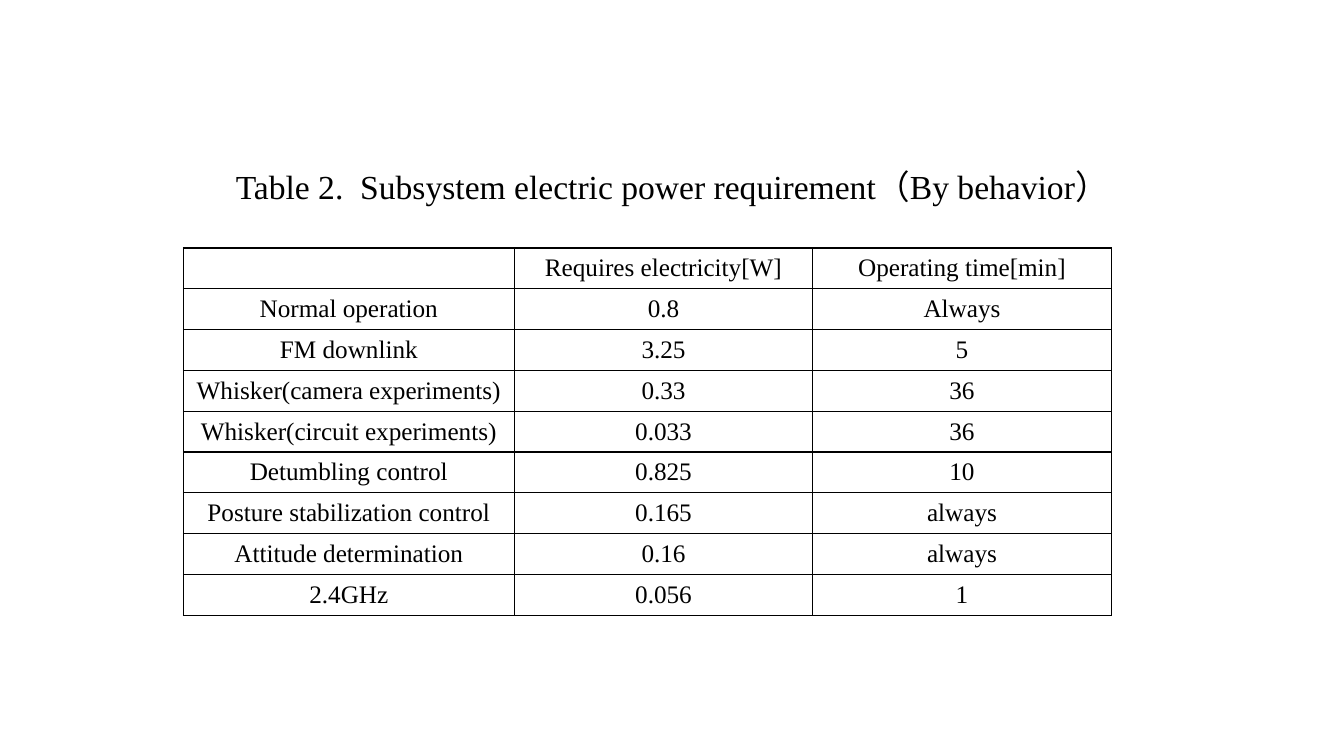
from typing import NamedTuple

import pptx
import pptx.dml.color
import pptx.enum.text
import pptx.oxml
import pptx.oxml.ns
import pptx.util

Pt = pptx.util.Pt
FONT = "Times New Roman"
BLACK, WHITE = "000000", "FFFFFF"
COL_WIDTHS = (236.4, 213.2, 213.2)
ROW_HEIGHT = 29.16


class PowerRow(NamedTuple):
    behavior: str
    watts: str
    minutes: str


POWER_ROWS = [
    PowerRow("", "Requires electricity[W]", "Operating time[min]"),
    PowerRow("Normal operation", "0.8", "Always"),
    PowerRow("FM downlink", "3.25", "5"),
    PowerRow("Whisker(camera experiments)", "0.33", "36"),
    PowerRow("Whisker(circuit experiments)", "0.033", "36"),
    PowerRow("Detumbling control", "0.825", "10"),
    PowerRow("Posture stabilization control", "0.165", "always"),
    PowerRow("Attitude determination", "0.16", "always"),
    PowerRow("2.4GHz", "0.056", "1"),
]


def rgb(color: str) -> pptx.dml.color.RGBColor:
    return pptx.dml.color.RGBColor.from_string(color)


def write_centred(tf, text: str, size: float) -> None:
    tf.text = text
    p = tf.paragraphs[0]
    p.alignment = pptx.enum.text.PP_ALIGN.CENTER
    for r in p.runs:
        r.font.name = FONT
        r.font.size = Pt(size)
        r.font.color.rgb = rgb(BLACK)


def add_borders(cell, color: str, width: float) -> None:
    """Line all four sides; borders must precede the fill in tcPr."""
    tc_pr = cell._tc.get_or_add_tcPr()
    for i, side in enumerate(("lnL", "lnR", "lnT", "lnB")):
        tc_pr.insert(i, pptx.oxml.parse_xml(
            f'<a:{side} {pptx.oxml.ns.nsdecls("a")} w="{Pt(width)}">'
            f'<a:solidFill><a:srgbClr val="{color}"/></a:solidFill></a:{side}>'))


def add_caption(slide) -> None:
    tf = slide.shapes.add_textbox(Pt(109.4), Pt(115.2), Pt(741.6), Pt(36)).text_frame
    tf.word_wrap = True
    write_centred(tf, "Table 2.  Subsystem electric power requirement（By behavior）", 24)


def add_power_table(slide) -> None:
    table = slide.shapes.add_table(
        len(POWER_ROWS), len(COL_WIDTHS), Pt(131), Pt(177.1),
        Pt(sum(COL_WIDTHS)), Pt(ROW_HEIGHT * len(POWER_ROWS))).table
    table.first_row = table.horz_banding = False
    for column, width in zip(table.columns, COL_WIDTHS):
        column.width = Pt(width)
    for row, values in zip(table.rows, POWER_ROWS):
        row.height = Pt(ROW_HEIGHT)
        for cell, value in zip(row.cells, values):
            write_centred(cell.text_frame, value, 18)
            cell.vertical_anchor = pptx.enum.text.MSO_ANCHOR.MIDDLE
            cell.fill.solid()
            cell.fill.fore_color.rgb = rgb(WHITE)
            add_borders(cell, BLACK, 1)


def main() -> None:
    prs = pptx.Presentation()
    prs.slide_width, prs.slide_height = Pt(960), Pt(540)
    slide = prs.slides.add_slide(prs.slide_layouts[6])
    add_caption(slide)
    add_power_table(slide)
    prs.save("out.pptx")


if __name__ == "__main__":
    main()
